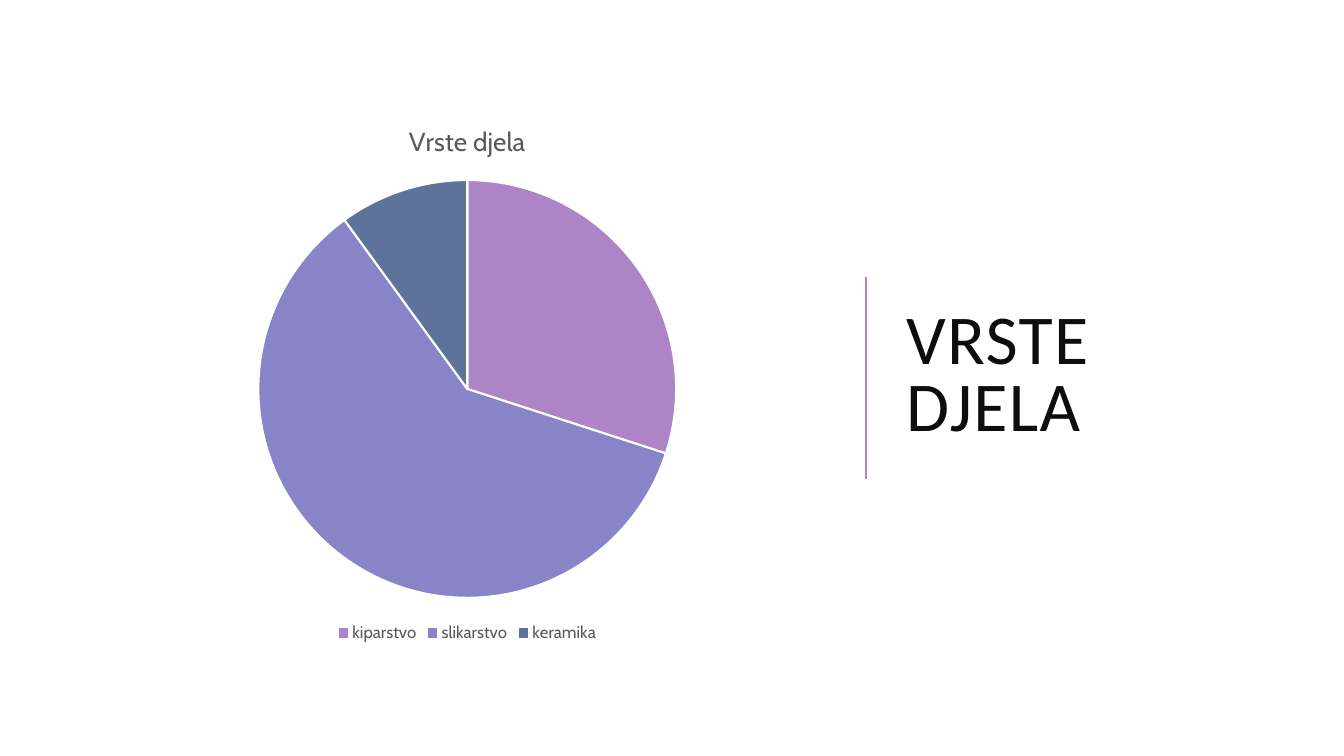
from pptx import Presentation
from pptx.chart.data import CategoryChartData
from pptx.dml.color import RGBColor
from pptx.enum.chart import XL_CHART_TYPE, XL_LEGEND_POSITION
from pptx.enum.shapes import MSO_CONNECTOR
from pptx.enum.text import MSO_ANCHOR, MSO_AUTO_SIZE, PP_ALIGN
from pptx.oxml.ns import qn
from pptx.util import Pt
from lxml import etree

PIE = XL_CHART_TYPE.PIE
BOTTOM = XL_LEGEND_POSITION.BOTTOM
STRAIGHT = MSO_CONNECTOR.STRAIGHT
MIDDLE = MSO_ANCHOR.MIDDLE
NO_AUTOFIT = MSO_AUTO_SIZE.NONE
LEFT = PP_ALIGN.LEFT

TITLE_ONLY_LAYOUT = 5
TITLE_FONT, CHART_FONT = "Calibri", "Cabin"
COLORS = {
    "background": "FFFFFF",
    "title": "0D0D0D",
    "chart_text": "595959",
    "kiparstvo": "AD84C6",
    "slikarstvo": "8784C7",
    "keramika": "5D739A",
}
ARTWORK_SHARES = {"kiparstvo": 30, "slikarstvo": 60, "keramika": 10}


def color(name):
    return RGBColor.from_string(COLORS[name])


def style_font(font, family, size, color_name):
    font.name = family
    font.size = Pt(size)
    font.bold = False
    font.color.rgb = color(color_name)


def add_shares_pie(slide, left, top, width, height):
    shares = CategoryChartData()
    shares.categories = list(ARTWORK_SHARES)
    shares.add_series("Vrste djela", list(ARTWORK_SHARES.values()))
    chart = slide.shapes.add_chart(
        PIE, Pt(left), Pt(top), Pt(width), Pt(height), shares).chart
    style_font(chart.font, CHART_FONT, 12, "chart_text")

    chart.has_title = True
    heading = chart.chart_title.text_frame
    heading.text = "Vrste djela"
    style_font(heading.paragraphs[0].runs[0].font, CHART_FONT, 18.6, "chart_text")

    chart.has_legend = True
    chart.legend.position = BOTTOM
    chart.legend.include_in_layout = False
    style_font(chart.legend.font, CHART_FONT, 12, "chart_text")

    plot = chart.plots[0]
    plot.vary_by_categories = True
    for index, category in enumerate(ARTWORK_SHARES):
        slice_format = plot.series[0].points[index].format
        slice_format.fill.solid()
        slice_format.fill.fore_color.rgb = color(category)
        slice_format.line.color.rgb = color("background")
        slice_format.line.width = Pt(1.5)


def add_title_panel(slide, left, top, width, height):
    """Place the title in the box, with a divider to its left."""
    divider_x = left - 21.6
    divider_top, divider_height = top + 147.6, 144
    divider = slide.shapes.add_connector(
        STRAIGHT, Pt(divider_x), Pt(divider_top + divider_height),
        Pt(divider_x), Pt(divider_top))
    divider.line.color.rgb = color("kiparstvo")
    divider.line.width = Pt(1.5)
    etree.SubElement(divider._element.spPr, qn("a:effectLst"))

    title = slide.shapes.title
    title.left, title.top = Pt(left), Pt(top)
    title.width, title.height = Pt(width), Pt(height)
    frame = title.text_frame
    frame.text = "VRSTE DJELA"
    frame.word_wrap = True
    frame.auto_size = NO_AUTOFIT
    frame.vertical_anchor = MIDDLE
    paragraph = frame.paragraphs[0]
    paragraph.alignment = LEFT
    paragraph.line_spacing = 0.8
    run = paragraph.runs[0]
    style_font(run.font, TITLE_FONT, 50, "title")
    run.font._element.set("spc", "100")


def main():
    presentation = Presentation()
    presentation.slide_width, presentation.slide_height = Pt(960), Pt(540)
    slide = presentation.slides.add_slide(
        presentation.slide_layouts[TITLE_ONLY_LAYOUT])
    slide.background.fill.solid()
    slide.background.fill.fore_color.rgb = color("background")
    add_title_panel(slide, 640, 50.4, 273.6, 438.5)
    add_shares_pie(slide, 74.2, 73.4, 519.1, 388.8)
    presentation.save("out.pptx")


if __name__ == "__main__":
    main()
